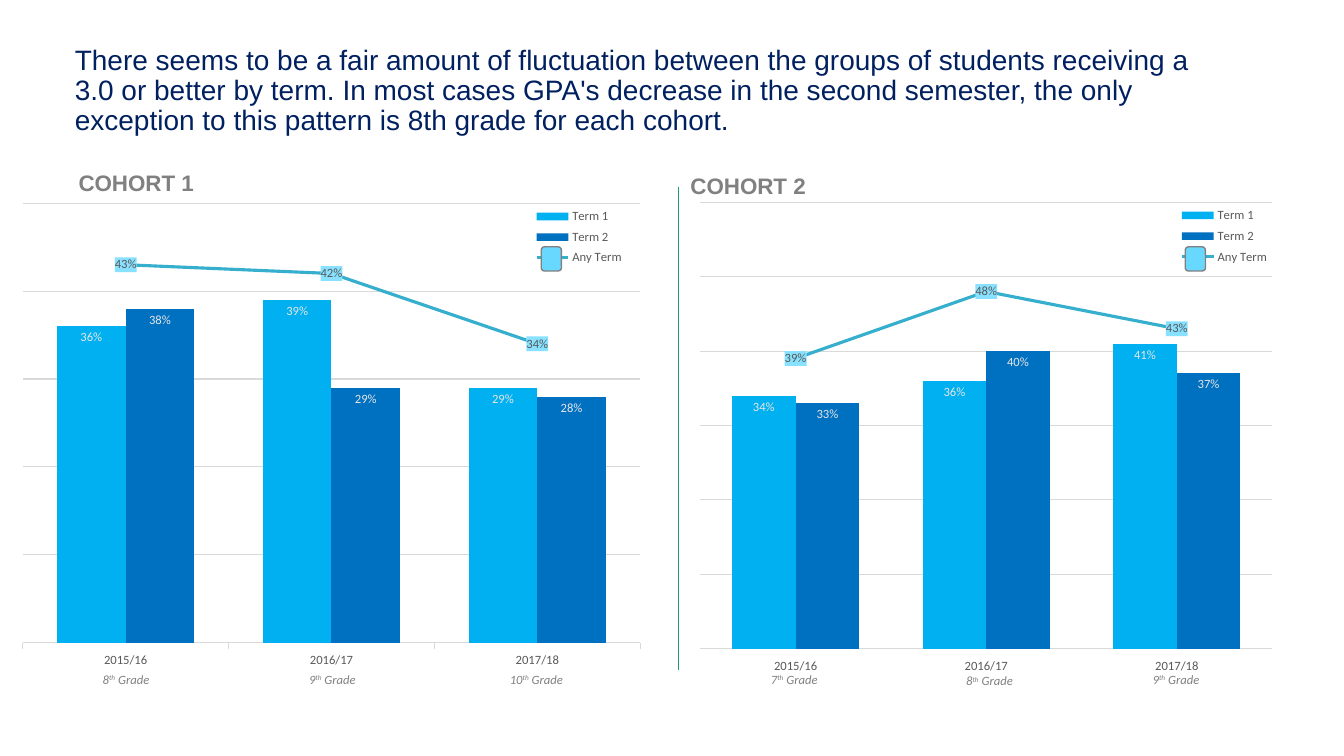
from lxml import etree
from pptx import Presentation
from pptx.chart.data import CategoryChartData
from pptx.dml.color import RGBColor
from pptx.enum.chart import (XL_CHART_TYPE, XL_LABEL_POSITION, XL_LEGEND_POSITION,
                             XL_MARKER_STYLE, XL_TICK_LABEL_POSITION, XL_TICK_MARK)
from pptx.enum.shapes import MSO_CONNECTOR, MSO_SHAPE
from pptx.enum.text import MSO_ANCHOR, PP_ALIGN
from pptx.oxml import parse_xml
from pptx.oxml.ns import nsdecls, qn
from pptx.util import Cm, Pt

CLUSTERED = XL_CHART_TYPE.COLUMN_CLUSTERED
INSIDE_END = XL_LABEL_POSITION.INSIDE_END
CENTER = XL_LABEL_POSITION.CENTER
CORNER = XL_LEGEND_POSITION.CORNER
NO_MARKER = XL_MARKER_STYLE.NONE
LABELS_LOW = XL_TICK_LABEL_POSITION.LOW
TICK_NONE = XL_TICK_MARK.NONE
TICK_OUTSIDE = XL_TICK_MARK.OUTSIDE
STRAIGHT = MSO_CONNECTOR.STRAIGHT
ROUNDED = MSO_SHAPE.ROUNDED_RECTANGLE
MIDDLE = MSO_ANCHOR.MIDDLE
LEFT = PP_ALIGN.LEFT

NAVY = RGBColor(0x00, 0x20, 0x60)
GREEN = RGBColor(0x1D, 0x9A, 0x78)
GRAY = RGBColor(0x80, 0x80, 0x80)
DARK_GRAY = RGBColor(0x59, 0x59, 0x59)
GRID_GRAY = RGBColor(0xD9, 0xD9, 0xD9)
PALE_GRAY = RGBColor(0xE7, 0xE6, 0xE6)
BLACK = RGBColor(0x00, 0x00, 0x00)
SKY = RGBColor(0x00, 0xB0, 0xF0)
BLUE = RGBColor(0x00, 0x70, 0xC0)
TEAL = RGBColor(0x36, 0xAF, 0xCE)
LIGHT_SKY = RGBColor(0x69, 0xD8, 0xFF)
LABEL_SKY = RGBColor(0x87, 0xE1, 0xFF)

YEARS = ("2015/16", "2016/17", "2017/18")
TITLE = ("There seems to be a fair amount of fluctuation between the groups of students "
         "receiving a 3.0 or better by term. In most cases GPA's decrease in the second "
         "semester, the only exception to this pattern is 8th grade for each cohort.")
COHORTS = (
    {"name": "COHORT 1", "heading": (1.73, 4.14), "box": (0.25, 4.88, 16.21, 12.17),
     "terms": ((0.36, 0.39, 0.29), (0.38, 0.29, 0.28), (0.43, 0.42, 0.34)),
     "maximum": 0.5, "tick": TICK_OUTSIDE,
     "plot": (0.02, 0.02, 0.96, 0.91), "legend": (0.81, 0.02, 0.15, 0.14), "marker": 13.64,
     "grades": (("8", 2.34, 16.81), ("9", 7.54, 16.81), ("10", 12.6, 16.81))},
    {"name": "COHORT 2", "heading": (17.15, 4.22), "box": (17.35, 4.85, 15.01, 12.24),
     "terms": ((0.34, 0.36, 0.41), (0.33, 0.4, 0.37), (0.39, 0.48, 0.43)),
     "maximum": 0.6, "tick": TICK_NONE,
     "plot": (0.02, 0.02, 0.96, 0.92), "legend": (0.82, 0.02, 0.16, 0.14), "marker": 29.87,
     "grades": (("7", 19.18, 16.81), ("8", 24.1, 16.84), ("9", 28.8, 16.81))},
)


def style_font(font, size, color, name="Calibri", bold=False, italic=False):
    font.size = Pt(size)
    font.color.rgb = color
    font.name = name
    font.bold = bold
    font.italic = italic


def write_text(paragraph, text, superscript=False, **style):
    run = paragraph.add_run()
    run.text = text
    style_font(run.font, **style)
    if superscript:
        run.font._element.set("baseline", "30000")


def make_layout(box, inner=False):
    layout = parse_xml(f"<c:layout {nsdecls('c')}><c:manualLayout/></c:layout>")
    values = [("layoutTarget", "inner")] if inner else []
    values += [("xMode", "edge"), ("yMode", "edge"), *zip("xywh", box)]
    for tag, value in values:
        etree.SubElement(layout[0], qn(f"c:{tag}")).set("val", str(value))
    return layout


def move_to_line(chart):
    bar_plot = chart._chartSpace.find(".//" + qn("c:barChart"))
    series = bar_plot.findall(qn("c:ser"))[-1]
    for flag in series.findall(qn("c:invertIfNegative")):
        series.remove(flag)
    line_plot = parse_xml(
        f'<c:lineChart {nsdecls("c")}><c:grouping val="stacked"/><c:varyColors val="0"/>'
        '<c:marker val="1"/></c:lineChart>')
    line_plot.insert(2, series)
    for axis in bar_plot.findall(qn("c:axId")):
        etree.SubElement(line_plot, axis.tag).set("val", axis.get("val"))
    bar_plot.addnext(line_plot)


def place_chart_parts(chart, plot_box, legend_box):
    plot_area = chart._chartSpace.find(".//" + qn("c:plotArea"))
    legend = chart._chartSpace.find(".//" + qn("c:legend"))
    for part in (plot_area, legend):
        for layout in part.findall(qn("c:layout")):
            part.remove(layout)
    plot_area.insert(0, make_layout(plot_box, inner=True))
    legend.find(qn("c:legendPos")).addnext(make_layout(legend_box))


def label_series(series, position, color, fill=None):
    labels = series.data_labels
    labels.show_value = True
    labels.number_format = "0%"
    labels.number_format_is_linked = False
    labels.position = position
    style_font(labels.font, 9, color)
    if fill is not None:
        labels._element.find(qn("c:txPr")).addprevious(parse_xml(
            f'<c:spPr {nsdecls("c", "a")}><a:solidFill><a:srgbClr val="{fill}"/>'
            '</a:solidFill></c:spPr>'))


class CohortSlide:
    def __init__(self, presentation):
        self.slide = presentation.slides.add_slide(presentation.slide_layouts[5])
        self.shapes = self.slide.shapes
        self.title_style = {"size": 20, "color": NAVY, "name": "Arial"}
        self.heading_style = {"size": 16, "color": GRAY, "name": "Arial", "bold": True}
        self.grade_style = {"size": 9, "color": GRAY, "italic": True}

    def add_title(self, text, left, top, width, height):
        title = self.shapes.title
        title.left, title.top, title.width, title.height = map(Cm, (left, top, width, height))
        title.text_frame.vertical_anchor = MIDDLE
        title.text_frame.word_wrap = True
        paragraph = title.text_frame.paragraphs[0]
        paragraph.alignment = LEFT
        paragraph.line_spacing = 0.9
        write_text(paragraph, text, **self.title_style)

    def add_box(self, left, top, width, height):
        text_box = self.shapes.add_textbox(*map(Cm, (left, top, width, height)))
        text_box.text_frame.word_wrap = True
        return text_box.text_frame.paragraphs[0]

    def add_heading(self, text, left, top):
        write_text(self.add_box(left, top, 4.55, 0.94), text, **self.heading_style)

    def add_grade(self, number, left, top):
        paragraph = self.add_box(left, top, 2.31, 0.64)
        write_text(paragraph, number, **self.grade_style)
        write_text(paragraph, "th", superscript=True, **self.grade_style)
        write_text(paragraph, " Grade", **self.grade_style)

    def add_divider(self, x, top, bottom):
        divider = self.shapes.add_connector(STRAIGHT, Cm(x), Cm(top), Cm(x), Cm(bottom))
        divider.line.color.rgb = GREEN
        divider.line.width = Pt(0.5)
        etree.SubElement(divider._element.spPr, qn("a:effectLst"))

    def add_legend_marker(self, left):
        marker = self.shapes.add_shape(ROUNDED, Cm(left), Cm(6.22), Cm(0.51), Cm(0.61))
        marker.shadow.inherit = False
        marker.fill.solid()
        marker.fill.fore_color.rgb = LIGHT_SKY
        marker.line.color.rgb = GRAY
        marker.line.width = Pt(1)

    def add_cohort_chart(self, cohort):
        data = CategoryChartData(number_format="0%")
        data.categories = YEARS
        for name, values in zip(("Term 1", "Term 2", "Any Term"), cohort["terms"]):
            data.add_series(name, values)
        chart = self.shapes.add_chart(CLUSTERED, *map(Cm, cohort["box"]), data).chart
        chart.has_title = False
        style_font(chart.font, 10, BLACK)
        move_to_line(chart)
        self.format_series(*chart.plots)
        self.format_axes(chart, cohort)
        chart.has_legend = True
        chart.legend.position = CORNER
        chart.legend.include_in_layout = True
        style_font(chart.legend.font, 9, DARK_GRAY)
        place_chart_parts(chart, cohort["plot"], cohort["legend"])

    def format_series(self, bars, lines):
        bars.vary_by_categories = False
        bars.gap_width = 100
        bars.overlap = 0
        for series, color in zip(bars.series, (SKY, BLUE)):
            series.format.fill.solid()
            series.format.fill.fore_color.rgb = color
            label_series(series, INSIDE_END, PALE_GRAY)
        any_term = lines.series[0]
        any_term.smooth = False
        any_term.marker.style = NO_MARKER
        any_term.format.line.color.rgb = TEAL
        any_term.format.line.width = Pt(2.25)
        label_series(any_term, CENTER, DARK_GRAY, LABEL_SKY)

    def format_axes(self, chart, cohort):
        years, share = chart.category_axis, chart.value_axis
        years.major_tick_mark = cohort["tick"]
        years.minor_tick_mark = TICK_NONE
        years.tick_label_position = LABELS_LOW
        style_font(years.tick_labels.font, 9, DARK_GRAY)
        share.minimum_scale = 0
        share.maximum_scale = cohort["maximum"]
        share.major_unit = 0.1
        share.has_major_gridlines = True
        share.visible = False
        for line in (years.format.line, share.major_gridlines.format.line):
            line.color.rgb = GRID_GRAY
            line.width = Pt(0.75)


def main():
    presentation = Presentation()
    presentation.slide_width, presentation.slide_height = Cm(33.87), Cm(19.05)
    slide = CohortSlide(presentation)
    slide.add_title(TITLE, 1.63, 0.46, 29.21, 3.68)
    slide.add_divider(17.09, 4.7, 16.89)
    for cohort in COHORTS:
        slide.add_heading(cohort["name"], *cohort["heading"])
        slide.add_cohort_chart(cohort)
        slide.add_legend_marker(cohort["marker"])
        for grade in cohort["grades"]:
            slide.add_grade(*grade)
    presentation.save("out.pptx")


if __name__ == "__main__":
    main()
